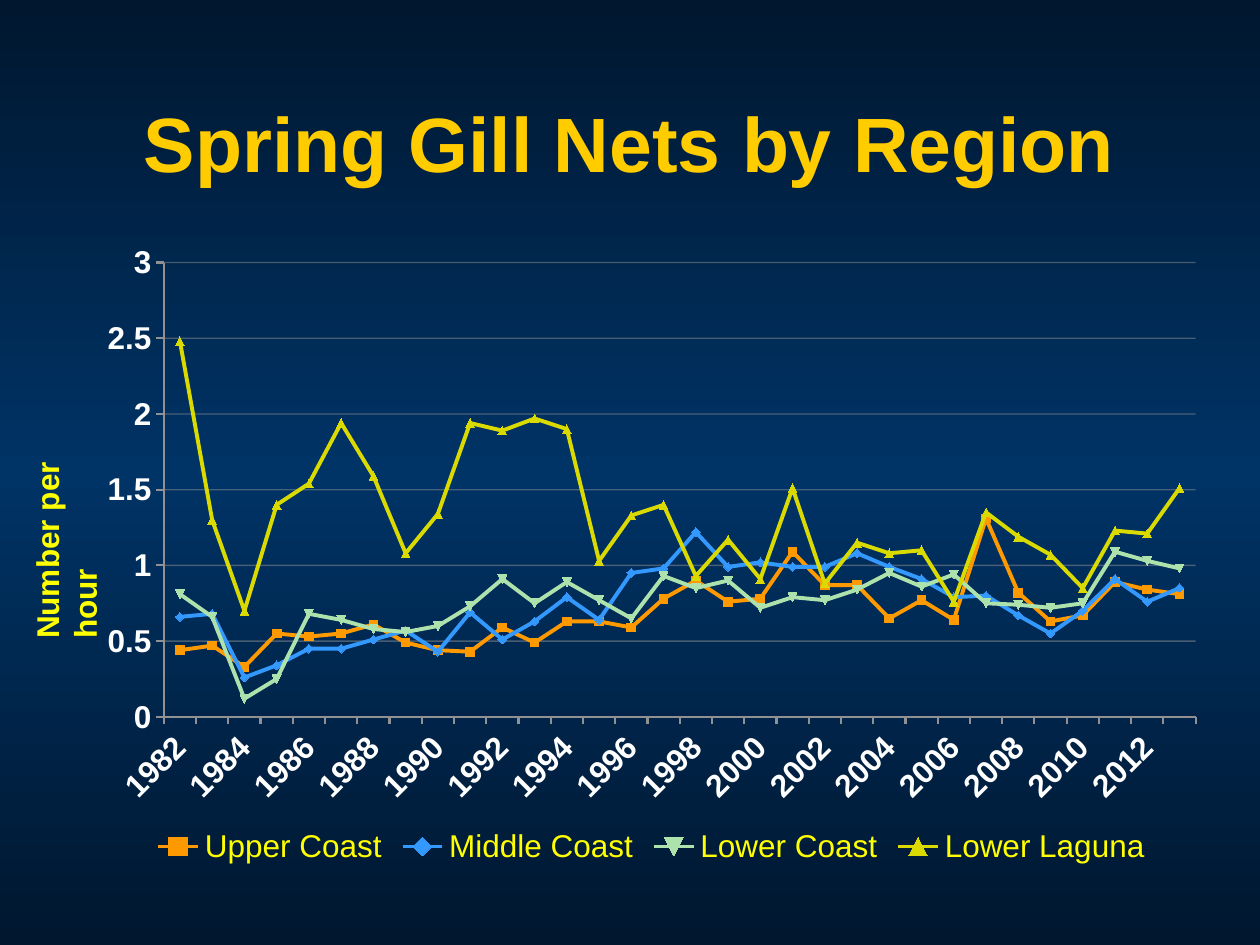
"""Build the slide of spring gill net catch rates by region."""
import copy
from dataclasses import dataclass

import pptx
import pptx.chart.data
import pptx.dml.color
import pptx.enum.chart
import pptx.enum.text
import pptx.oxml
import pptx.oxml.ns
import pptx.util

Inches = pptx.util.Inches
Pt = pptx.util.Pt
qn = pptx.oxml.ns.qn


@dataclass(frozen=True)
class Theme:
    """Hold the colours, font and type sizes."""
    font: str = "Arial"
    edge: str = "00172F"
    mid: str = "003366"
    gold: str = "FFCC00"
    yellow: str = "FFFF00"
    white: str = "FFFFFF"
    grey: str = "919191"
    title: int = 44
    text: int = 18


THEME = Theme()
YEARS = range(1982, 2014)
RATES = {
    "Upper Coast": ("FF9900", [
        0.44, 0.47, 0.33, 0.55, 0.53, 0.55, 0.61, 0.49, 0.44, 0.43, 0.59,
        0.49, 0.63, 0.63, 0.59, 0.78, 0.9, 0.76, 0.78, 1.09, 0.87, 0.87,
        0.65, 0.77, 0.64, 1.31, 0.82, 0.63, 0.67, 0.89, 0.84, 0.81]),
    "Middle Coast": ("3399FF", [
        0.66, 0.68, 0.26, 0.34, 0.45, 0.45, 0.51, 0.57, 0.43, 0.69, 0.51,
        0.63, 0.79, 0.64, 0.95, 0.98, 1.22, 0.99, 1.02, 0.99, 0.99, 1.08,
        0.99, 0.91, 0.79, 0.8, 0.67, 0.55, 0.7, 0.91, 0.76, 0.85]),
    "Lower Coast": ("ADE2AD", [
        0.81, 0.66, 0.12, 0.25, 0.68, 0.64, 0.58, 0.56, 0.6, 0.73, 0.91,
        0.75, 0.89, 0.77, 0.65, 0.93, 0.85, 0.9, 0.72, 0.79, 0.77, 0.84,
        0.95, 0.86, 0.94, 0.75, 0.74, 0.72, 0.75, 1.09, 1.03, 0.98]),
    "Lower Laguna": ("DADA00", [
        2.48, 1.3, 0.7, 1.4, 1.54, 1.94, 1.59, 1.08, 1.34, 1.94, 1.89,
        1.97, 1.9, 1.03, 1.33, 1.4, 0.93, 1.17, 0.91, 1.51, 0.88, 1.15,
        1.08, 1.1, 0.76, 1.35, 1.19, 1.07, 0.85, 1.23, 1.21, 1.51]),
}


def rgb(code):
    """Turn a hex code into a colour."""
    return pptx.dml.color.RGBColor.from_string(code)


def style(font, size, color, bold):
    """Set the look of a font."""
    font.name = THEME.font
    font.size = Pt(size)
    font.bold = bold
    font.color.rgb = rgb(color)


def stroke(line, color, width):
    """Set a solid line."""
    line.color.rgb = rgb(color)
    line.width = Pt(width)


def place(shape, box):
    """Move and size a shape."""
    shape.left, shape.top, shape.width, shape.height = map(Inches, box)


def write(frame, text, size, color):
    """Add one bold run to a text frame."""
    frame.word_wrap = True
    run = frame.paragraphs[0].add_run()
    run.text = text
    style(run.font, size, color, True)


def paint(slide):
    """Fill the background, dark at both ends."""
    fill = slide.background.fill
    fill.gradient()
    fill.gradient_angle = 90
    stops = slide.element.find(".//" + qn("a:gsLst"))
    stops.insert(1, copy.deepcopy(stops[0]))
    tones = (THEME.edge, THEME.mid, THEME.edge)
    for stop, spot, tone in zip(fill.gradient_stops, (0, 0.5, 1), tones):
        stop.position = spot
        stop.color.rgb = rgb(tone)


def add_title(slide, text, box):
    """Fill the title placeholder."""
    title = slide.shapes.title
    place(title, box)
    frame = title.text_frame
    frame.vertical_anchor = pptx.enum.text.MSO_ANCHOR.MIDDLE
    write(frame, text, THEME.title, THEME.gold)
    frame.paragraphs[0].alignment = pptx.enum.text.PP_ALIGN.CENTER


def add_label(slide, text, box):
    """Add text that reads upwards."""
    frame = slide.shapes.add_textbox(*map(Inches, box)).text_frame
    frame._txBody.bodyPr.set("vert", "vert270")
    write(frame, text, THEME.text, THEME.yellow)
    frame.auto_size = pptx.enum.text.MSO_AUTO_SIZE.SHAPE_TO_FIT_TEXT


def style_axis(axis):
    """Set the labels, ticks and line of an axis."""
    style(axis.tick_labels.font, THEME.text, THEME.white, True)
    axis.major_tick_mark = pptx.enum.chart.XL_TICK_MARK.OUTSIDE
    axis.minor_tick_mark = pptx.enum.chart.XL_TICK_MARK.NONE
    stroke(axis.format.line, THEME.grey, 1.25)


def style_years(axis):
    """Slant the year labels and show every second one."""
    style_axis(axis)
    axis.has_major_gridlines = False
    root = axis._element
    root.find(qn("c:txPr")).find(qn("a:bodyPr")).set("rot", "-2700000")
    after = root.find(qn("c:noMultiLvlLbl"))
    for name, step in (("tickLblSkip", 2), ("tickMarkSkip", 1)):
        after.addprevious(pptx.oxml.parse_xml(
            f'<c:{name} {pptx.oxml.ns.nsdecls("c")} val="{step}"/>'))


def style_rates(axis):
    """Set the scale and the faint gridlines."""
    style_axis(axis)
    axis.minimum_scale, axis.maximum_scale, axis.major_unit = 0, 3, 0.5
    axis.tick_labels.number_format = "General"
    axis.tick_labels.number_format_is_linked = False
    axis.has_major_gridlines = True
    stroke(axis.major_gridlines.format.line, THEME.grey, 0.75)
    tone = axis.major_gridlines._xAx.find(
        qn("c:majorGridlines")).find(".//" + qn("a:srgbClr"))
    tone.append(pptx.oxml.parse_xml(
        f'<a:alpha {pptx.oxml.ns.nsdecls("a")} val="50000"/>'))


def style_series(line, color):
    """Set the line and markers of a series."""
    line.smooth = False
    stroke(line.format.line, color, 2.25)
    mark = line.marker
    mark.style = pptx.enum.chart.XL_MARKER_STYLE.AUTOMATIC
    mark.size = 5
    mark.format.fill.solid()
    mark.format.fill.fore_color.rgb = rgb(color)
    mark.format.line.color.rgb = rgb(color)


def set_plot(chart, box):
    """Fix the inner plot area as shares of the chart."""
    area = chart._chartSpace.chart.plotArea
    for old in area.findall(qn("c:layout")):
        area.remove(old)
    parts = "".join(f'<c:{key} val="{share}"/>'
                    for key, share in zip("xywh", box))
    area.insert(0, pptx.oxml.parse_xml(
        f'<c:layout {pptx.oxml.ns.nsdecls("c")}><c:manualLayout>'
        '<c:layoutTarget val="inner"/><c:xMode val="edge"/>'
        f'<c:yMode val="edge"/>{parts}</c:manualLayout></c:layout>'))


def add_graph(slide, box):
    """Add the line chart of yearly rates."""
    data = pptx.chart.data.CategoryChartData()
    data.categories = [str(year) for year in YEARS]
    for name, (_, rates) in RATES.items():
        data.add_series(name, rates)
    kind = pptx.enum.chart.XL_CHART_TYPE.LINE_MARKERS
    chart = slide.shapes.add_chart(kind, *map(Inches, box), data).chart
    style(chart.font, THEME.text, THEME.yellow, False)
    chart.has_title = False
    chart.has_legend = True
    chart.legend.position = pptx.enum.chart.XL_LEGEND_POSITION.BOTTOM
    chart.legend.include_in_layout = False
    style(chart.legend.font, THEME.text, THEME.yellow, False)
    style_years(chart.category_axis)
    style_rates(chart.value_axis)
    plot = chart.plots[0]
    plot.vary_by_categories = False
    for line, (color, _) in zip(plot.series, RATES.values()):
        style_series(line, color)
    set_plot(chart, (0.07, 0.05, 0.91, 0.71))


def main():
    """Build and save the slide."""
    deck = pptx.Presentation()
    deck.slide_width, deck.slide_height = Inches(10), Inches(7.5)
    slide = deck.slides.add_slide(deck.slide_layouts[5])
    paint(slide)
    add_title(slide, "Spring Gill Nets by Region", (0, 0.5, 10, 1.25))
    add_graph(slide, (0.67, 1.83, 9, 5.08))
    add_label(slide, "Number per hour", (0.17, 3, 0.5, 2.17))
    deck.save("out.pptx")


if __name__ == "__main__":
    main()
